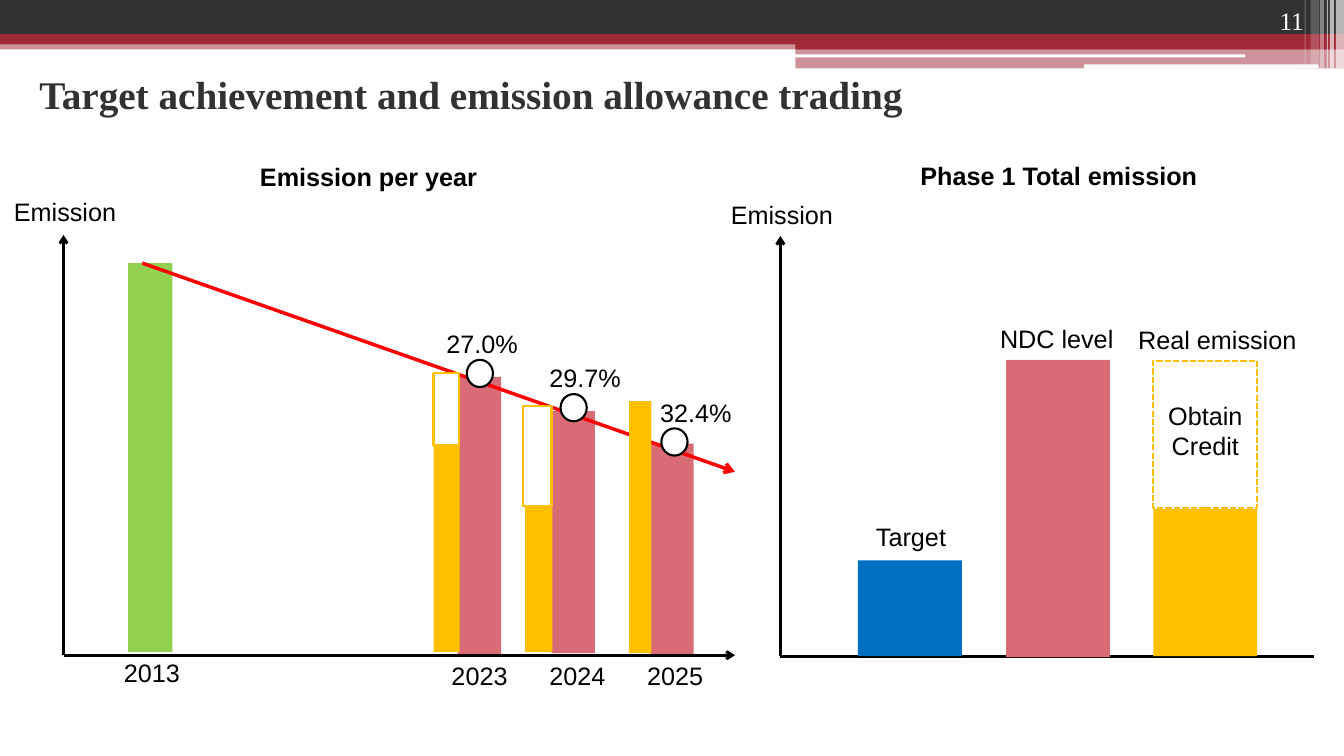
from lxml.etree import SubElement
from pptx import Presentation
from pptx.dml.color import RGBColor
from pptx.enum.dml import MSO_LINE
from pptx.enum.shapes import MSO_CONNECTOR, MSO_SHAPE
from pptx.enum.text import MSO_ANCHOR, MSO_AUTO_SIZE, PP_ALIGN
from pptx.oxml.ns import qn
from pptx.util import Inches, Pt

BLACK, WHITE, DARK, CRIMSON = "000000", "FFFFFF", "323232", "9F2936"
PINK, AMBER, GREEN, BLUE, RED = "D96B77", "FFC000", "92D050", "0070C0", "FF0000"


def color(value):
    return RGBColor.from_string(value)


def lengths(*values):
    return [Inches(value) for value in values]


class SlideBuilder:
    label_format = {"name": "Arial", "size": Pt(18), "bold": False}
    heading_format = {**label_format, "bold": True}
    title_format = {"name": "Times New Roman", "size": Pt(28), "bold": True}
    number_format = {**title_format, "size": Pt(18), "bold": False}

    def __init__(self, presentation):
        self.slide = presentation.slides.add_slide(presentation.slide_layouts[5])

    def fill_text(self, shape, text, font_format, text_color=BLACK,
                  align=PP_ALIGN.LEFT, anchor=MSO_ANCHOR.TOP,
                  auto_size=MSO_AUTO_SIZE.SHAPE_TO_FIT_TEXT):
        frame = shape.text_frame
        frame.text = text
        frame.word_wrap = True
        frame.auto_size = auto_size
        frame.vertical_anchor = anchor
        for paragraph in frame.paragraphs:
            paragraph.alignment = align
            for name, value in font_format.items():
                setattr(paragraph.font, name, value)
            paragraph.font.color.rgb = color(text_color)

    def title(self, text, left, top, width, height):
        shape = self.slide.shapes.title
        box = lengths(left, top, width, height)
        for name, value in zip(("left", "top", "width", "height"), box):
            setattr(shape, name, value)
        self.fill_text(shape, text, self.title_format, DARK,
                       anchor=MSO_ANCHOR.MIDDLE, auto_size=MSO_AUTO_SIZE.NONE)

    def text(self, text, left, top, width=2.14, height=0.4,
             font_format=label_format, **options):
        shape = self.slide.shapes.add_textbox(*lengths(left, top, width, height))
        self.fill_text(shape, text, font_format, **options)

    def shape(self, left, top, width, height, fill, kind=MSO_SHAPE.RECTANGLE,
              outline=None, dash=None, opacity=100):
        shape = self.slide.shapes.add_shape(kind, *lengths(left, top, width, height))
        shape.shadow.inherit = False
        shape.fill.solid()
        shape.fill.fore_color.rgb = color(fill)
        if opacity < 100:
            rgb = shape.fill._xPr.find(qn("a:solidFill"))[0]
            SubElement(rgb, qn("a:alpha"), val=str(opacity * 1000))
        if outline:
            shape.line.color.rgb = color(outline)
            shape.line.width = Pt(1.5)
            if dash:
                shape.line.dash_style = dash
        else:
            shape.line.fill.background()

    def line(self, start, end, line_color=BLACK, width=2, arrow=True):
        connector = self.slide.shapes.add_connector(
            MSO_CONNECTOR.STRAIGHT, *lengths(*start, *end))
        connector.line.color.rgb = color(line_color)
        connector.line.width = Pt(width)
        if arrow:
            SubElement(connector.line._get_or_add_ln(), qn("a:tailEnd"), type="arrow")
        SubElement(connector._element.spPr, qn("a:effectLst"))


def draw_banner(builder):
    bands = [
        (0, 0.4, 13.33, 0.09, CRIMSON, 50),
        (0, 0, 13.33, 0.34, DARK, 100),
        (0, 0.34, 13.33, 0.1, CRIMSON, 100),
        (7.89, 0.39, 5.44, 0.1, CRIMSON, 100),
        (7.89, 0.48, 5.44, 0.2, CRIMSON, 50),
    ]
    for *box, fill, opacity in bands:
        builder.shape(*box, fill, opacity=opacity)
    for box in [(7.88, 0.54, 4.47, 0.03), (10.75, 0.64, 2.33, 0.04)]:
        builder.shape(*box, WHITE, MSO_SHAPE.ROUNDED_RECTANGLE)
    stripes = [
        (13.25, 0.08, 0.68, 65), (13.19, 0.04, 0.68, 65), (13.16, 0.01, 0.68, 60),
        (13.09, 0.04, 0.68, 40), (13, 0.08, 0.64, 20), (12.94, 0.01, 0.64, 30),
    ]
    for left, width, height, opacity in stripes:
        builder.shape(left, 0, width, height, WHITE, opacity=opacity)
    builder.text("11", 11.92, 0, 1.11, 0.4, builder.number_format, text_color=WHITE,
                 align=PP_ALIGN.RIGHT, anchor=MSO_ANCHOR.BOTTOM,
                 auto_size=MSO_AUTO_SIZE.NONE)


def draw_yearly_emission(builder):
    builder.text("Emission per year", 2.48, 1.55, 3.09,
                 font_format=builder.heading_format)
    builder.text("Emission", 0.04, 1.9)
    for left, top, height in [(6.45, 4.4, 2.09), (5.47, 4.08, 2.4), (4.54, 3.74, 2.76)]:
        builder.shape(left, top, 0.43, height, PINK)
    origin = (0.63, 6.5)
    for end in [(0.63, 2.33), (7.29, 6.5)]:
        builder.line(origin, end)
    builder.shape(1.27, 2.61, 0.44, 3.86, GREEN)
    builder.text("2013", 1.13, 6.47)
    builder.line((1.41, 2.61), (7.29, 4.68), RED, 2.5)

    reductions = [
        ("2023", "27.0%", 4.33, 3.21, 4.63),
        ("2024", "29.7%", 5.35, 3.55, 5.56),
        ("2025", "32.4%", 6.45, 3.89, 6.56),
    ]
    for index, (year, rate, left, top, marker_left) in enumerate(reductions):
        builder.shape(marker_left, top + 0.36, 0.26, 0.27, WHITE,
                      MSO_SHAPE.OVAL, BLACK)
        builder.text(year, 4.38 + 0.97 * index, 6.5)
        builder.text(rate, left, top)

    for box in [(4.3, 3.7, 0.25, 0.72), (5.19, 4.03, 0.28, 0.99)]:
        builder.shape(*box, WHITE, outline=AMBER)
    for box in [(4.3, 4.41, 0.26, 2.06), (5.21, 5.02, 0.27, 1.45),
                (6.24, 3.98, 0.22, 2.5)]:
        builder.shape(*box, AMBER)


def draw_phase_total(builder):
    builder.text("Phase 1 Total emission", 9.03, 1.54, 3.09,
                 font_format=builder.heading_format)
    builder.text("Emission", 7.15, 1.93)
    origin = (7.74, 6.51)
    builder.line(origin, (13.03, 6.51), arrow=False)
    builder.line(origin, (7.74, 2.34))
    totals = [
        ("NDC level", 9.82, 3.16, 9.98, 3.57, 2.95, PINK),
        ("Target", 8.59, 5.12, 8.51, 5.56, 0.95, BLUE),
        ("Real emission", 11.19, 3.17, 11.44, 5.05, 1.46, AMBER),
    ]
    for label, label_left, label_top, left, top, height, fill in totals:
        builder.shape(left, top, 1.03, height, fill)
        builder.text(label, label_left, label_top)
    builder.shape(11.44, 3.58, 1.03, 1.46, WHITE, outline=AMBER,
                  dash=MSO_LINE.SQUARE_DOT)
    builder.text("Obtain\nCredit", 11.44, 3.92, 1.03, 0.71, align=PP_ALIGN.CENTER)


def main():
    presentation = Presentation()
    presentation.slide_width, presentation.slide_height = lengths(13.33, 7.5)
    builder = SlideBuilder(presentation)
    draw_banner(builder)
    builder.title("Target achievement and emission allowance trading",
                  0.29, 0.35, 12, 1.17)
    draw_yearly_emission(builder)
    draw_phase_total(builder)
    presentation.save("out.pptx")


if __name__ == "__main__":
    main()
